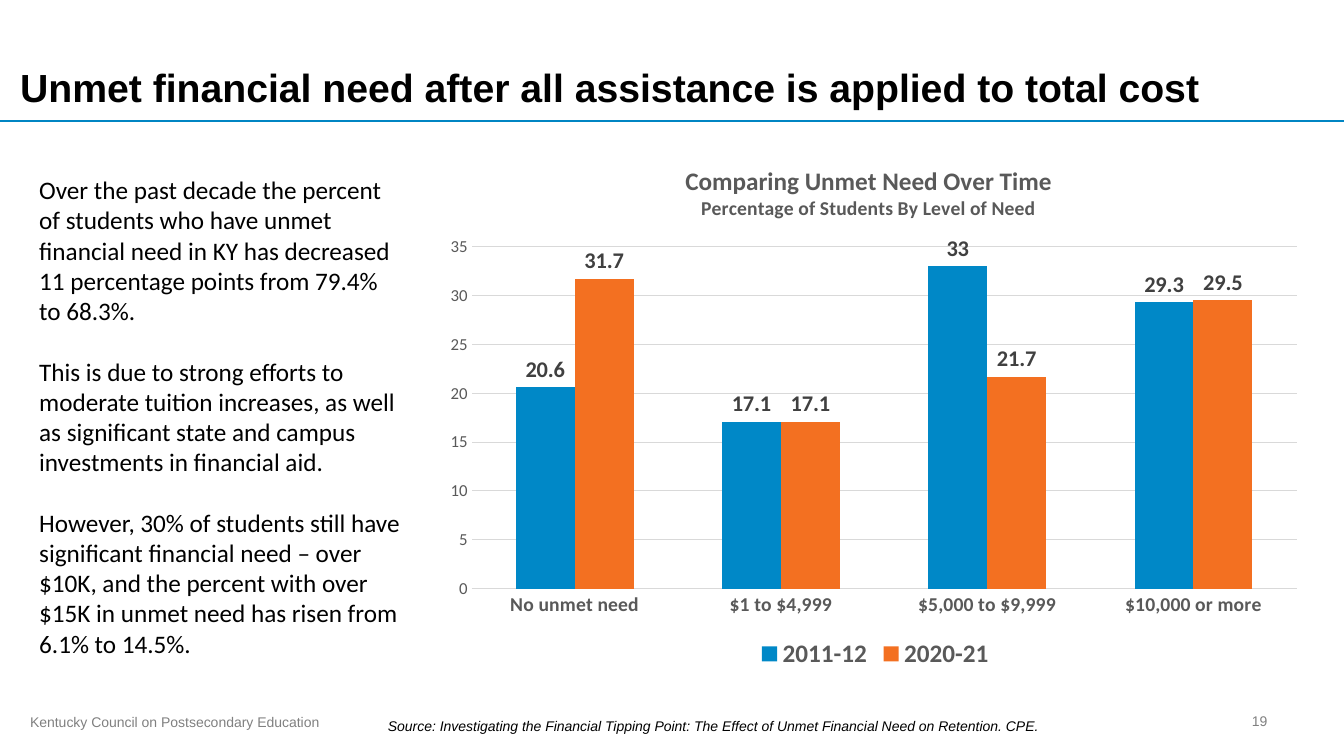
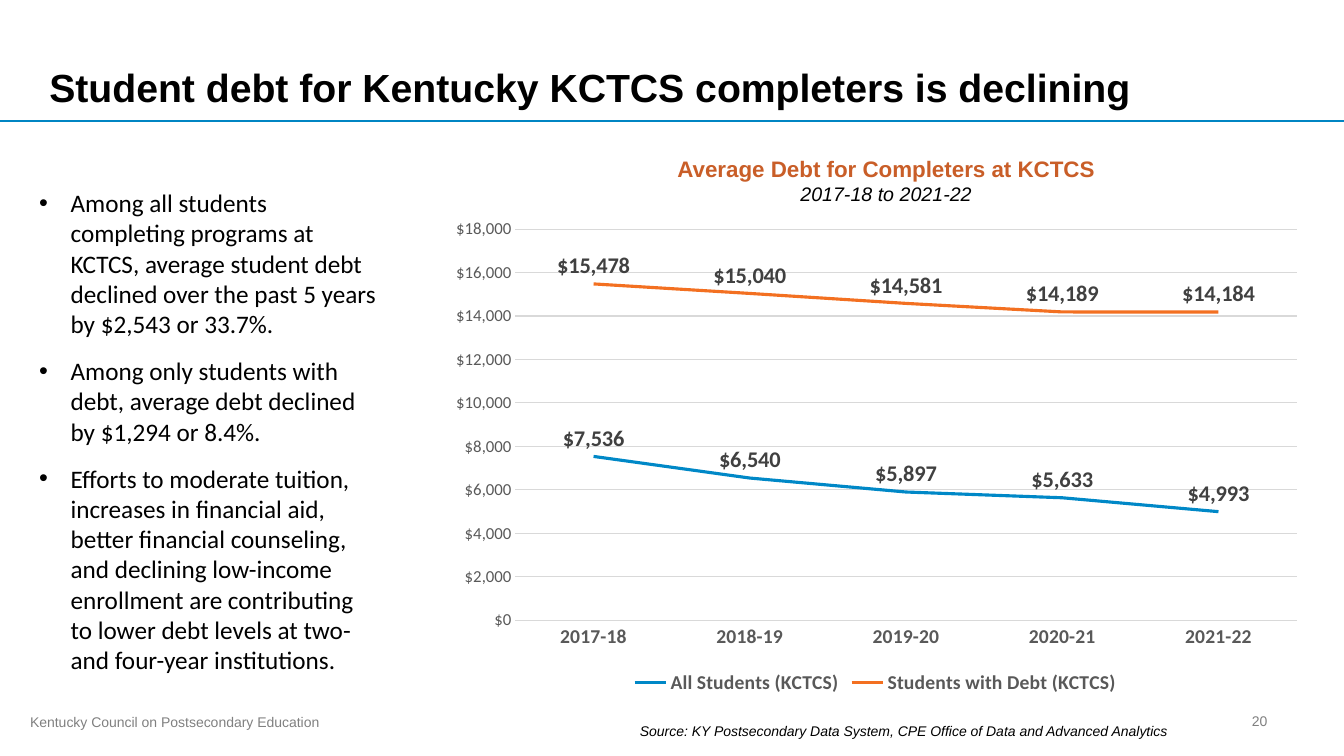
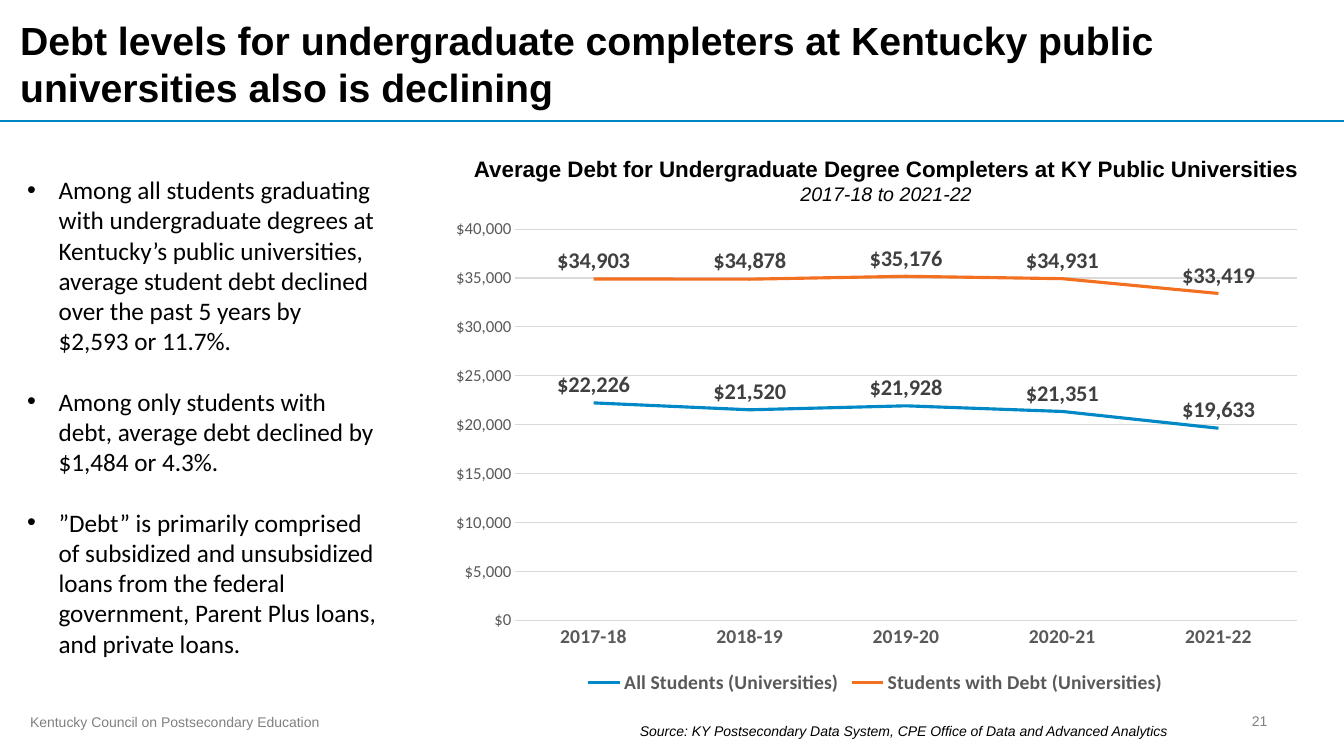
from lxml import etree
from pptx import Presentation
from pptx.chart.data import CategoryChartData
from pptx.dml.color import RGBColor
from pptx.enum import chart as ch, shapes, text
from pptx.oxml import ns
from pptx.util import Pt

BLACK = RGBColor(0, 0, 0)
GRAY = RGBColor(0x80, 0x80, 0x80)
DARK = RGBColor(0x40, 0x40, 0x40)
MID = RGBColor(0x59, 0x59, 0x59)
PALE = RGBColor(0xD9, 0xD9, 0xD9)
RULE = RGBColor(0x00, 0x85, 0xC3)
BLUE = RGBColor(0x00, 0x88, 0xC7)
ORANGE = RGBColor(0xF3, 0x70, 0x21)
RUST = RGBColor(0xC9, 0x5E, 0x28)

WIDE, HIGH, BAND = 960, 540, 86.4
FOOT = "Kentucky Council on Postsecondary Education"
DATA = "Source: KY Postsecondary Data System, CPE Office of Data and Advanced Analytics"
YEARS = ["2017-18", "2018-19", "2019-20", "2020-21", "2021-22"]
SPAN = "2017-18 to 2021-22"
MONEY = '"$"#,##0'

HEAD = dict(name="Arial", size=Pt(28), bold=True, color=BLACK)
SMALL = dict(name="Arial", size=Pt(10), color=GRAY)
CITE = dict(SMALL, color=BLACK, italic=True)
BODY = dict(name="Calibri", size=Pt(18), color=BLACK)
SUB = dict(name="Arial", size=Pt(14), color=BLACK, italic=True)
AXIS = dict(name="Calibri", size=Pt(12), color=MID, bold=False)
CATS = dict(AXIS, size=Pt(14), bold=True)
BIG = dict(CATS, size=Pt(18))
LABEL = dict(CATS, size=Pt(16), color=DARK)

# Kinds of chart: box in points; plot as fractions of that box
BARS = dict(
    kind=ch.XL_CHART_TYPE.COLUMN_CLUSTERED, box=(311.76, 100, 627, 381.6),
    plot=(0.04, 0.2, 0.94, 0.64), key=BIG, fmt="General",
    spot=ch.XL_LABEL_POSITION.OUTSIDE_END)
LINES = dict(
    kind=ch.XL_CHART_TYPE.LINE, box=(311.76, 149.76, 627, 349.2),
    plot=(0.09, 0.04, 0.89, 0.8), key=CATS, fmt=MONEY,
    spot=ch.XL_LABEL_POSITION.ABOVE)

SLIDES = [
    dict(
        title="Unmet financial need after all assistance is applied to total cost",
        left=0, page="19", cite=(270, 505.44),
        source="Source: Investigating the Financial Tipping Point: "
               "The Effect of Unmet Financial Need on Retention. CPE.",
        box=(20.88, 121, 273, 378), gap=21.6, dots=False,
        body=[
            "Over the past decade the percent of students who have unmet financial "
            "need in KY has decreased 11 percentage points from 79.4% to 68.3%.",
            "This is due to strong efforts to moderate tuition increases, as well as "
            "significant state and campus investments in financial aid.",
            "However, 30% of students still have significant financial need – over "
            "$10K, and the percent with over $15K in unmet need has risen from "
            "6.1% to 14.5%.",
        ],
        look=BARS, top=35, step=5,
        inner=[("Comparing Unmet Need Over Time", BIG),
               ("Percentage of Students By Level of Need", CATS)],
        cats=["No unmet need", "$1 to $4,999", "$5,000 to $9,999", "$10,000 or more"],
        data={"2011-12": (20.6, 17.1, 33, 29.3),
              "2020-21": (31.7, 17.1, 21.7, 29.5)},
    ),
    dict(
        title="Student debt for Kentucky KCTCS completers is declining",
        left=20.88, page="20", cite=(450, 509), source=DATA,
        box=(20.88, 130.3, 255, 392), gap=12, dots=True,
        body=[
            "Among all students completing programs at KCTCS, average student debt "
            "declined over the past 5 years by $2,543 or 33.7%.",
            "Among only students with debt, average debt declined by $1,294 or 8.4%.",
            "Efforts to moderate tuition, increases in financial aid, better financial "
            "counseling, and declining low-income enrollment are contributing to "
            "lower debt levels at two- and four-year institutions.",
        ],
        look=LINES, top=18000, step=2000,
        outer=("Average Debt for Completers at KCTCS", RUST),
        cats=YEARS,
        data={"All Students (KCTCS)": (7536, 6540, 5897, 5633, 4993),
              "Students with Debt (KCTCS)": (15478, 15040, 14581, 14189, 14184)},
    ),
    dict(
        title="Debt levels for undergraduate completers at Kentucky public "
              "universities also is declining",
        left=0, page="21", cite=(450, 509), source=DATA,
        box=(12.24, 121, 264, 400), gap=21.6, dots=True,
        body=[
            "Among all students graduating with undergraduate degrees at Kentucky’s "
            "public universities, average student debt declined over the past 5 years "
            "by $2,593 or 11.7%.",
            "Among only students with debt, average debt declined by $1,484 or 4.3%.",
            "”Debt” is primarily comprised of subsidized and unsubsidized loans from "
            "the federal government, Parent Plus loans, and private loans.",
        ],
        look=LINES, top=40000, step=5000,
        outer=("Average Debt for Undergraduate Degree Completers at KY Public "
               "Universities", BLACK),
        cats=YEARS,
        data={"All Students (Universities)": (22226, 21520, 21928, 21351, 19633),
              "Students with Debt (Universities)": (34903, 34878, 35176, 34931, 33419)},
    ),
]


def style(font, form):
    for key, val in form.items():
        if key == "color":
            font.color.rgb = val
        else:
            setattr(font, key, val)


def fill(frame, paras):
    """Write (text, format) pairs, one paragraph each."""
    for i, (words, form) in enumerate(paras):
        para = frame.add_paragraph() if i else frame.paragraphs[0]
        run = para.add_run()
        run.text = words
        style(run.font, form)


def write(slide, box, paras, pad=(7.2, 3.6, 7.2, 3.6),
          anchor=text.MSO_ANCHOR.TOP, align=text.PP_ALIGN.LEFT):
    frame = slide.shapes.add_textbox(*map(Pt, box)).text_frame
    frame.word_wrap = True
    frame.vertical_anchor = anchor
    for side, val in zip(("left", "top", "right", "bottom"), pad):
        setattr(frame, "margin_" + side, Pt(val))
    fill(frame, paras)
    for para in frame.paragraphs:
        para.alignment = align
    return frame


def bullet(para):
    props = para._p.get_or_add_pPr()
    props.set("marL", str(Pt(22.5)))
    props.set("indent", str(-Pt(22.5)))
    for tag, key, val in (("a:buFont", "typeface", "Arial"), ("a:buChar", "char", "•")):
        etree.SubElement(props, ns.qn(tag)).set(key, val)


def place(node, spot, vals, inner=False):
    """Give a chart part a manual layout: x, y and perhaps w, h."""
    for old in node.findall(ns.qn("c:layout")):
        node.remove(old)
    lay = etree.Element(ns.qn("c:layout"))
    man = etree.SubElement(lay, ns.qn("c:manualLayout"))
    pairs = [("layoutTarget", "inner")] if inner else []
    pairs += [("xMode", "edge"), ("yMode", "edge"), *zip("xywh", vals)]
    for tag, val in pairs:
        etree.SubElement(man, ns.qn("c:" + tag)).set("val", str(val))
    node.insert(spot, lay)


def frame_page(slide, item):
    """Add the title, rule, footer, page number and source."""
    rule = slide.shapes.add_connector(
        shapes.MSO_CONNECTOR.STRAIGHT, 0, Pt(BAND), Pt(WIDE), Pt(BAND))
    rule.line.color.rgb = RULE
    rule.line.width = Pt(1.5)
    etree.SubElement(rule._element.spPr, ns.qn("a:effectLst"))
    write(slide, (14.4, 506.16, 612, 19.44), [(FOOT, SMALL)])
    write(slide, (item["left"], 0, WIDE - item["left"], BAND), [(item["title"], HEAD)],
          (14.4, 3.6, 14.4, 7.2), text.MSO_ANCHOR.BOTTOM)
    write(slide, (872, 500.4, 40.32, 28.8), [(item["page"], SMALL)],
          anchor=text.MSO_ANCHOR.MIDDLE, align=text.PP_ALIGN.RIGHT)
    write(slide, (*item["cite"], 504, 24), [(item["source"], CITE)], (7.2, 7.2, 7.2, 3.6))


def draw_axes(chart, item):
    cat, val = chart.category_axis, chart.value_axis
    for axis, form in ((cat, CATS), (val, AXIS)):
        style(axis.tick_labels.font, form)
        axis.major_tick_mark = axis.minor_tick_mark = ch.XL_TICK_MARK.NONE
    val.minimum_scale, val.maximum_scale, val.major_unit = 0, item["top"], item["step"]
    val.tick_labels.number_format = item["look"]["fmt"]
    val.tick_labels.number_format_is_linked = False
    val.format.line.fill.background()
    for line in (cat.format.line, val.major_gridlines.format.line):
        line.color.rgb = PALE
        line.width = Pt(0.75)


def draw_chart(slide, item):
    look = item["look"]
    data = CategoryChartData(number_format=look["fmt"])
    data.categories = item["cats"]
    for name, vals in item["data"].items():
        data.add_series(name, vals)
    chart = slide.shapes.add_chart(look["kind"], *map(Pt, look["box"]), data).chart
    style(chart.font, dict(name="Calibri", size=Pt(10), color=BLACK))
    draw_axes(chart, item)

    chart.has_title = "inner" in item
    if chart.has_title:
        fill(chart.chart_title.text_frame, item["inner"])
        place(chart.chart_title.element, 1, (0.28, 0.04))
    place(chart.element.find(".//" + ns.qn("c:plotArea")), 0, look["plot"], True)
    chart.has_legend = True
    chart.legend.position = ch.XL_LEGEND_POSITION.BOTTOM
    chart.legend.include_in_layout = False
    style(chart.legend.font, look["key"])

    plot = chart.plots[0]
    plot.vary_by_categories = False
    if look is BARS:
        plot.gap_width, plot.overlap = 150, 0
    for series, color in zip(plot.series, (BLUE, ORANGE)):
        if look is BARS:
            series.format.fill.solid()
            series.format.fill.fore_color.rgb = color
        else:
            series.smooth = False
            series.marker.style = ch.XL_MARKER_STYLE.NONE
            series.format.line.color.rgb = color
            series.format.line.width = Pt(2.25)
        labels = series.data_labels
        for key, val in dict(show_value=True, position=look["spot"],
                             number_format=look["fmt"],
                             number_format_is_linked=False).items():
            setattr(labels, key, val)
        style(labels.font, LABEL)


def build(slide, item):
    frame_page(slide, item)
    draw_chart(slide, item)
    frame = write(slide, item["box"], [(words, BODY) for words in item["body"]])
    for para in frame.paragraphs:
        para.space_after = Pt(item["gap"])
        if item["dots"]:
            bullet(para)
    if "outer" in item:
        words, color = item["outer"]
        write(slide, (327, 107.28, 612, 44),
              [(words, dict(HEAD, size=Pt(16), color=color)), (SPAN, SUB)],
              align=text.PP_ALIGN.CENTER)


def main():
    deck = Presentation()
    deck.slide_width, deck.slide_height = Pt(WIDE), Pt(HIGH)
    for item in SLIDES:
        build(deck.slides.add_slide(deck.slide_layouts[6]), item)
    deck.save("out.pptx")


if __name__ == "__main__":
    main()
